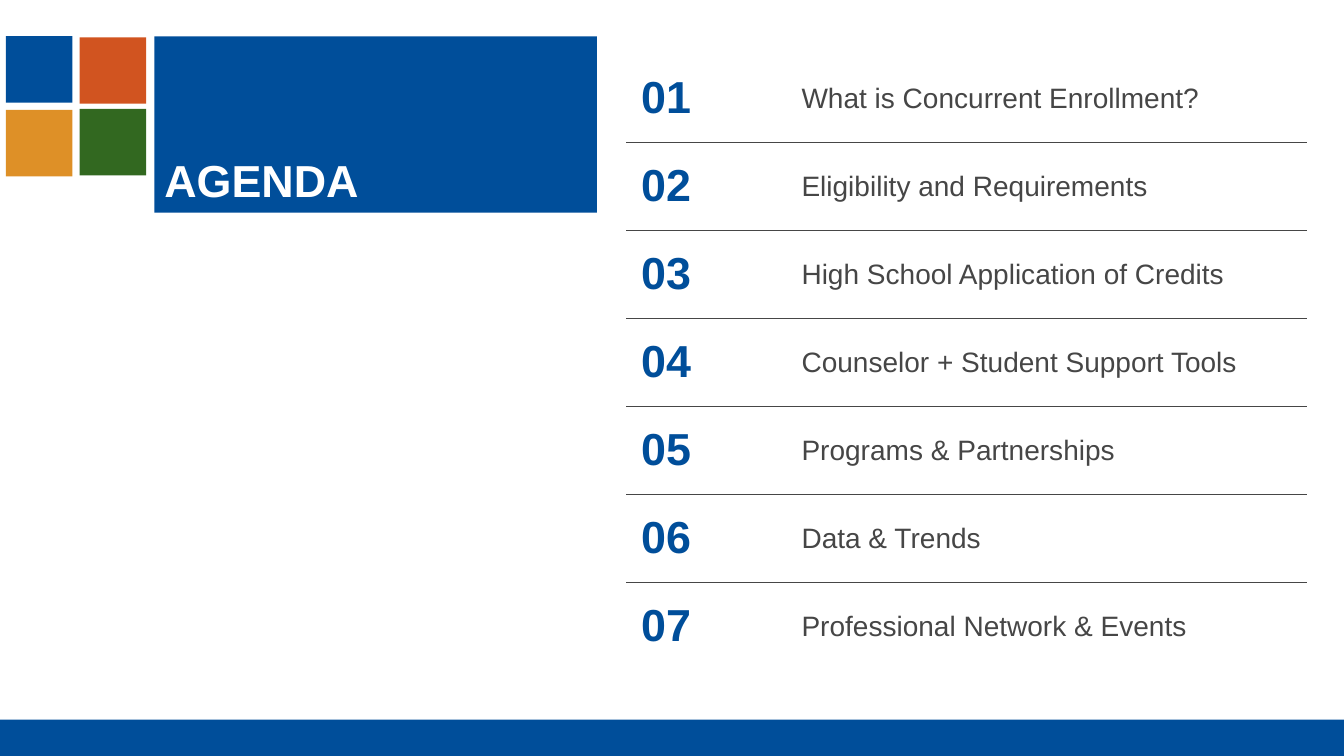
"""Build the agenda slide with a numbered list of topics."""
from lxml import etree
from pptx import Presentation
from pptx import util as u
from pptx.dml.color import RGBColor
from pptx.enum import shapes, text
from pptx.oxml.ns import qn

BLUE, ORANGE, GOLD, GREEN = "004E9A", "D15420", "DE9027", "326820"
GREY, WHITE = "464646", "FFFFFF"
TOPICS = [
    "What is Concurrent Enrollment?",
    "Eligibility and Requirements",
    "High School Application of Credits",
    "Counselor + Student Support Tools",
    "Programs & Partnerships",
    "Data & Trends",
    "Professional Network & Events",
]


def color(code):
    return RGBColor.from_string(code)


class AgendaSlide:
    font = "Arial"

    def __init__(self, deck):
        self.page = deck.slides.add_slide(deck.slide_layouts[5])

    def add_span(self, para, words, size, code, bold=False):
        span = para.add_run()
        span.text = words
        span.font.name = self.font
        span.font.size = u.Pt(size)
        span.font.bold = bold
        span.font.color.rgb = color(code)

    def block(self, left, top, width, height, code):
        box = self.page.shapes.add_shape(
            shapes.MSO_SHAPE.RECTANGLE, *map(u.Inches, (left, top, width, height)))
        box.shadow.inherit = False
        box.fill.solid()
        box.fill.fore_color.rgb = color(code)
        box.line.fill.background()

    def title(self, words, left, top, width, height):
        box = self.page.shapes.title
        box.left, box.top, box.width, box.height = map(u.Inches, (left, top, width, height))
        box.fill.solid()
        box.fill.fore_color.rgb = color(BLUE)
        frame = box.text_frame
        frame.auto_size = text.MSO_AUTO_SIZE.NONE
        frame.vertical_anchor = text.MSO_ANCHOR.BOTTOM
        para = frame.paragraphs[0]
        para.alignment = text.PP_ALIGN.LEFT
        para.line_spacing = 0.9
        self.add_span(para, words, 32, WHITE, True)

    def borders(self, cell, ruled_sides):
        properties = cell._tc.get_or_add_tcPr()
        for place, side in enumerate("LRTB"):
            line = etree.Element(qn(f"a:ln{side}"))
            if side in ruled_sides:
                line.set("w", str(u.Pt(0.5)))
                fill = etree.SubElement(line, qn("a:solidFill"))
                etree.SubElement(fill, qn("a:srgbClr"), val=GREY)
            else:
                etree.SubElement(line, qn("a:noFill"))
            properties.insert(place, line)

    def agenda(self, topics, left, top, widths, height):
        table = self.page.shapes.add_table(
            len(topics), 2, *map(u.Inches, (left, top, sum(widths), height))).table
        table.first_row = table.horz_banding = False
        for column, width in zip(table.columns, widths):
            column.width = u.Inches(width)
        for row, topic in enumerate(topics):
            ruled = ("T" if row > 0 else "") + ("B" if row < len(topics) - 1 else "")
            entries = [(f"{row + 1:02}", 32, BLUE, True), (topic, 20, GREY, False)]
            for column, entry in enumerate(entries):
                cell = table.cell(row, column)
                cell.fill.background()
                cell.vertical_anchor = text.MSO_ANCHOR.MIDDLE
                cell.margin_left = cell.margin_right = u.Inches(0.15)
                cell.margin_top = cell.margin_bottom = u.Inches(0.15)
                self.borders(cell, ruled)
                self.add_span(cell.text_frame.paragraphs[0], *entry)


def main():
    deck = Presentation()
    deck.slide_width, deck.slide_height = u.Inches(13.33), u.Inches(7.5)
    slide = AgendaSlide(deck)
    for left, top, code in [(0.06, 0.36, BLUE), (0.79, 0.37, ORANGE),
                            (0.06, 1.09, GOLD), (0.79, 1.08, GREEN)]:
        slide.block(left, top, 0.66, 0.66, code)
    slide.block(0, 7.14, 13.33, 0.36, BLUE)
    slide.title("AGENDA", 1.53, 0.36, 4.39, 1.75)
    slide.agenda(TOPICS, 6.21, 0.54, (1.59, 5.16), 6.11)
    deck.save("out.pptx")


if __name__ == "__main__":
    main()
